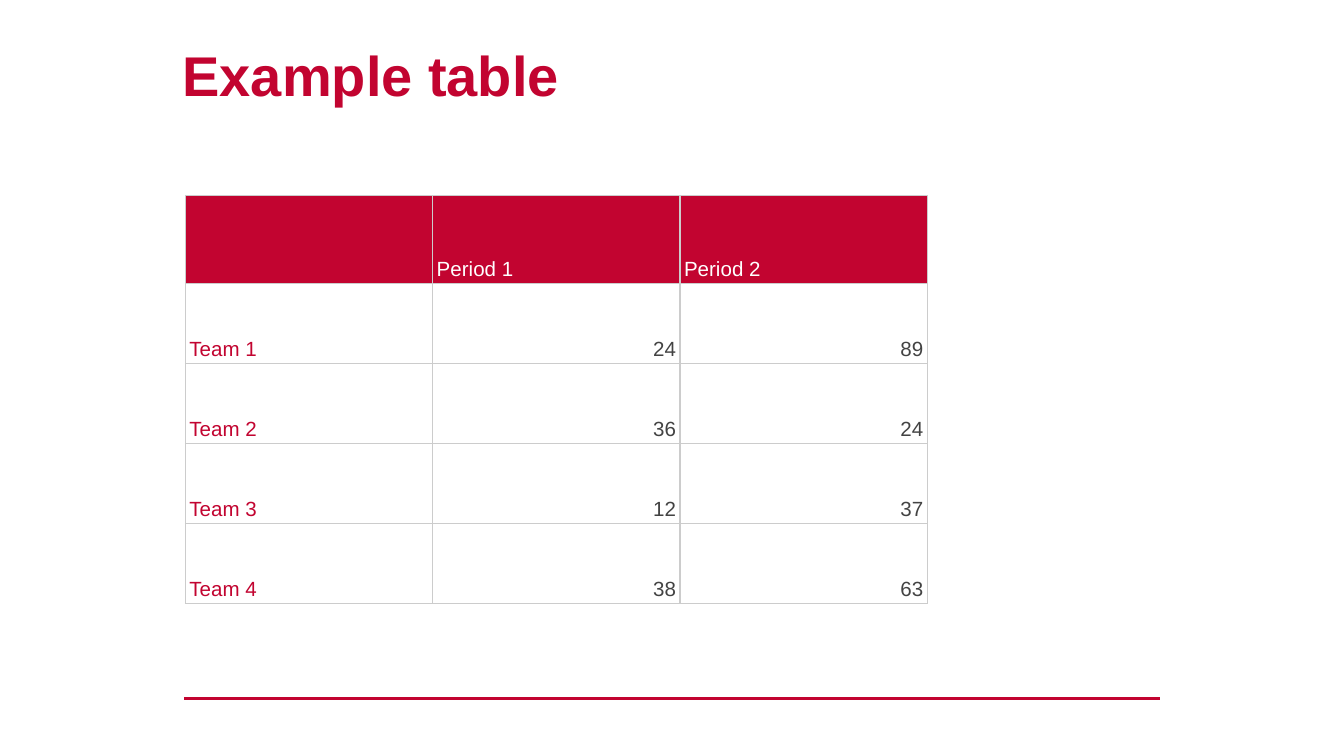
from lxml import etree
from pptx import Presentation
from pptx.dml.color import RGBColor
from pptx.enum.shapes import MSO_CONNECTOR
from pptx.enum.text import MSO_ANCHOR, PP_ALIGN
from pptx.oxml.ns import qn
from pptx.util import Pt

LINE = MSO_CONNECTOR.STRAIGHT
TOP, BOTTOM = MSO_ANCHOR.TOP, MSO_ANCHOR.BOTTOM
LEFT, RIGHT = PP_ALIGN.LEFT, PP_ALIGN.RIGHT

PX = 4572  # 200 px to the inch
RED, GREY, DARK, WHITE = "C20430", "CCCCCC", "434343", "FFFFFF"


def px(n):
    return n * PX


def color(code):
    return RGBColor.from_string(code)


def write(frame, text, size=11, ink=DARK, bold=False, align=LEFT, lead=1.0):
    par = frame.paragraphs[0]
    par.alignment = align
    par.line_spacing = lead
    run = par.add_run()
    run.text = text
    font = run.font
    font.name = "Arial"
    font.size = Pt(size)
    font.bold = bold
    font.color.rgb = color(ink)


class Deck:
    def __init__(self, width, height):
        self.file = Presentation()
        self.file.slide_width = px(width)
        self.file.slide_height = px(height)
        self.slide = self.file.slides.add_slide(self.file.slide_layouts[6])

    def text(self, x, y, w, h, text, **style):
        frame = self.slide.shapes.add_textbox(px(x), px(y), px(w), px(h)).text_frame
        frame.word_wrap = True
        frame.vertical_anchor = TOP
        frame.margin_left = frame.margin_right = px(20)
        frame.margin_top = frame.margin_bottom = px(20)
        write(frame, text, **style)

    def rule(self, x1, y1, x2, y2, ink, width):
        line = self.slide.shapes.add_connector(LINE, px(x1), px(y1), px(x2), px(y2))
        line.line.color.rgb = color(ink)
        line.line.width = Pt(width)
        etree.SubElement(line._element.spPr, qn("a:effectLst"))

    def border(self, cell, ink, width):
        props = cell._tc.get_or_add_tcPr()
        for side in ("a:lnL", "a:lnR", "a:lnT", "a:lnB"):
            edge = etree.SubElement(props, qn(side), w=str(Pt(width)))
            fill = etree.SubElement(edge, qn("a:solidFill"))
            etree.SubElement(fill, qn("a:srgbClr"), val=ink)

    def table(self, x, y, wide, tall, rows):
        grid = self.slide.shapes.add_table(
            len(rows), len(rows[0]), px(x), px(y),
            px(wide * len(rows[0])), px(sum(tall))).table
        for col in grid.columns:
            col.width = px(wide)
        for r, row in enumerate(rows):
            grid.rows[r].height = px(tall[r])
            for c, value in enumerate(row):
                self.cell(grid.cell(r, c), value, head=r == 0, label=c == 0)

    def cell(self, cell, value, head, label):
        self.border(cell, GREY, 0.75)
        cell.fill.solid()
        cell.fill.fore_color.rgb = color(RED if head else WHITE)
        cell.vertical_anchor = BOTTOM
        cell.margin_left = cell.margin_right = px(6)
        cell.margin_top = cell.margin_bottom = px(4)
        if value:
            ink = WHITE if head else RED if label else DARK
            align = LEFT if head or label else RIGHT
            write(cell.text_frame, value, ink=ink, align=align, lead=1.15)


def main():
    deck = Deck(2000, 1125)

    # Footer rule and title
    deck.rule(274, 1039, 1726, 1039, RED, 1.5)
    deck.text(252, 40, 1502, 138, "Example table", size=30, ink=RED, bold=True)

    # Team scores
    rows = [
        ("", "Period 1", "Period 2"),
        ("Team 1", "24", "89"),
        ("Team 2", "36", "24"),
        ("Team 3", "12", "37"),
        ("Team 4", "38", "63"),
    ]
    deck.table(276, 291, 368, [131] + [119] * 4, rows)

    deck.file.save("out.pptx")


if __name__ == "__main__":
    main()
